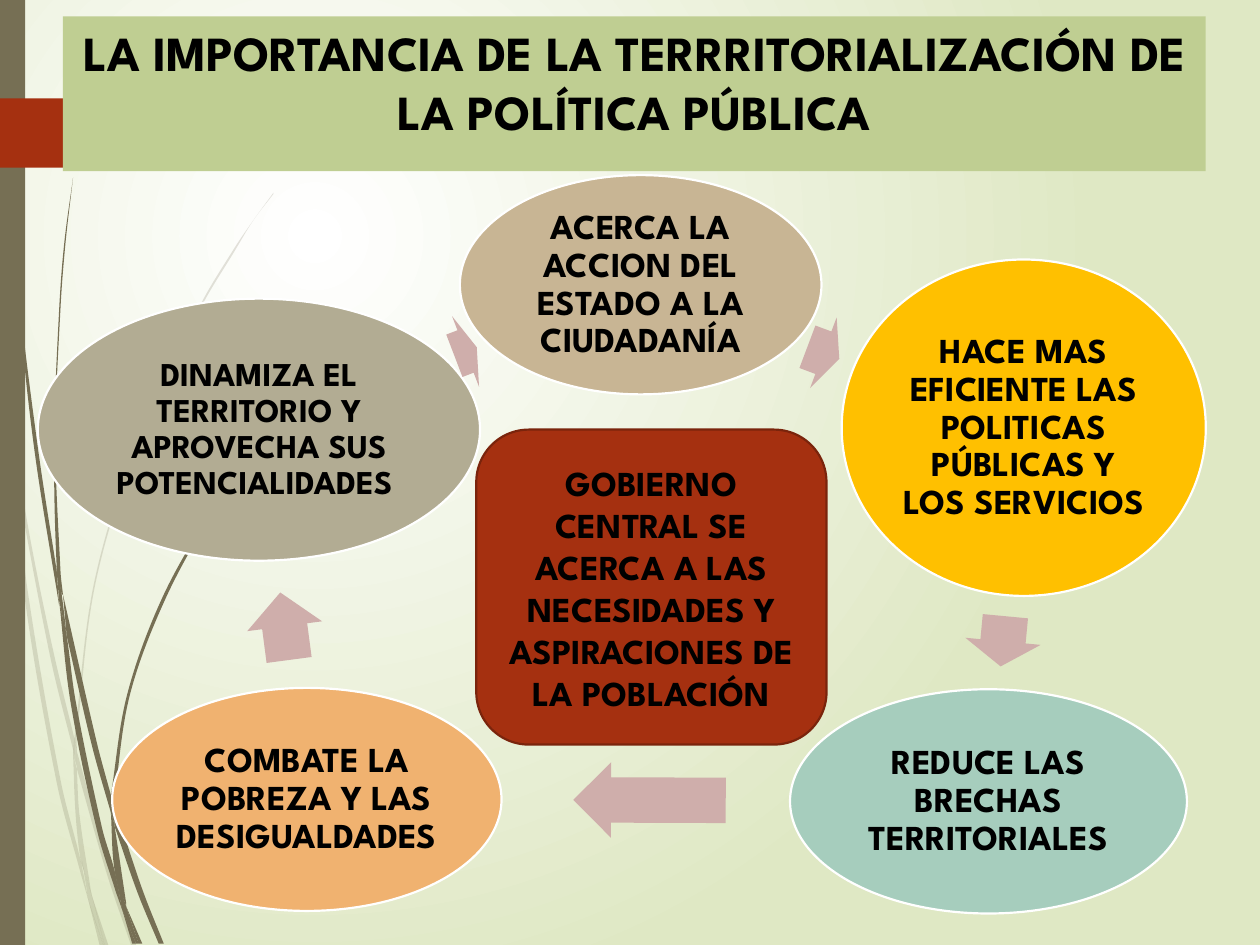
import math

from lxml import etree
from pptx import Presentation
from pptx import util as u
from pptx.dml.color import RGBColor
from pptx.enum import shapes, text
from pptx.oxml import ns

PX = u.Inches(1) // 100  # the slide is 1000 x 750 px
FONT = "League Spartan"
SHAPE = shapes.MSO_SHAPE

BLACK = RGBColor(0x00, 0x00, 0x00)
WHITE = RGBColor(0xFF, 0xFF, 0xFF)
PALE_GREEN = RGBColor(0xDF, 0xE8, 0xC4)
TITLE_GREEN = RGBColor(0xBF, 0xCE, 0x92)
OLIVE = RGBColor(0x76, 0x6F, 0x54)
RUST = RGBColor(0xA5, 0x30, 0x10)
DARK_RUST = RGBColor(0x7A, 0x24, 0x0C)
ROSE = RGBColor(0xCF, 0xAE, 0xAB)
TAN = RGBColor(0xC8, 0xB5, 0x94)
AMBER = RGBColor(0xFF, 0xC0, 0x00)
TEAL = RGBColor(0xA6, 0xCD, 0xBD)
ORANGE = RGBColor(0xF0, 0xB2, 0x70)
STONE = RGBColor(0xB2, 0xAC, 0x93)

# Each blade of grass: the points of its one edge and of the way back.
FAINT_BLADES = [
    ([(8, 350), (6, 322), (0, 282)], [(0, 299), (7, 344)]),
    ([(10, 345), (25, 433), (43, 520), (59, 586)], [(59, 599), (40, 522), (12, 376)]),
    ([(61, 596), (64, 607), (88, 692), (108, 750)], [(104, 750), (85, 694), (61, 610)]),
    ([(73, 711), (83, 750)], [(86, 750)]),
    ([(8, 350), (12, 376), (22, 469), (48, 619), (64, 683), (70, 714)],
     [(64, 693), (45, 621), (19, 470), (8, 350)]),
    ([(58, 599), (60, 646), (64, 683), (67, 692), (73, 711)],
     [(72, 706), (63, 646), (61, 610)]),
    ([(59, 586), (75, 461), (110, 348), (158, 244), (186, 197), (201, 175), (217, 153)],
     [(217, 154), (201, 175), (187, 198), (159, 245), (111, 349), (76, 462), (61, 584),
      (61, 596)]),
    ([(70, 714), (79, 750)], [(82, 750)]),
    ([(61, 608), (61, 596), (59, 586)], [(58, 599)]),
    ([(65, 683), (67, 692), (73, 711), (83, 750)], [(82, 750), (70, 714), (69, 707)]),
]
DARK_BLADES = [
    ([(2, 0), (3, 48), (5, 110), (14, 233), (27, 355), (47, 481)],
     [(45, 453), (30, 355), (15, 232), (6, 109), (4, 48), (3, 0)]),
    ([(50, 472), (77, 590), (88, 631)], [(88, 645), (73, 592), (53, 505)]),
    ([(91, 641), (94, 649), (113, 706), (130, 749)], [(126, 749), (109, 708), (91, 656)]),
    ([(47, 477), (53, 505), (60, 556), (81, 657), (91, 691), (97, 722)],
     [(92, 708), (77, 659), (56, 557), (47, 477)]),
    ([(58, 141), (51, 193), (47, 245), (43, 349), (45, 449), (49, 472)],
     [(50, 472), (48, 453), (44, 349), (48, 245), (52, 193), (58, 141)]),
    ([(100, 719), (110, 749)], [(113, 749)]),
    ([(45, 449), (49, 472), (53, 505)], [(47, 477), (45, 453)]),
    ([(88, 631), (101, 551), (129, 474), (168, 405), (191, 373), (203, 358), (215, 344)],
     [(216, 344), (203, 359), (191, 374), (169, 406), (131, 476), (103, 552), (91, 633),
      (91, 641)]),
    ([(97, 722), (105, 749)], [(108, 749)]),
    ([(88, 645), (91, 691), (100, 719)], [(100, 716), (91, 656), (90, 651)]),
    ([(88, 631), (91, 641), (91, 656)], [(90, 651), (88, 645)]),
    ([(91, 691), (96, 717), (97, 722), (108, 749)], [(110, 749), (100, 719), (96, 706)]),
]

# Wording, box, colour and text size of each stage, then box and turn of its arrow.
STAGES = [
    ("ACERCA LA ACCION DEL ESTADO A LA CIUDADANÍA",
     (365, 139, 287, 174), TAN, 20, (640, 250, 27, 60), 20.6),
    ("HACE MAS EFICIENTE LAS POLITICAS PÚBLICAS Y LOS SERVICIOS",
     (668, 206, 289, 267), AMBER, 20, (776, 479, 40, 60), 95.4),
    ("REDUCE LAS BRECHAS TERRITORIALES",
     (627, 547, 315, 178), TEAL, 20, (455, 605, 121, 60), 180.2),
    ("COMBATE LA POBREZA Y LAS DESIGUALDADES",
     (89, 546, 309, 177), ORANGE, 20, (199, 467, 54, 60), 262.5),
    ("DINAMIZA EL TERRITORIO Y APROVECHA SUS POTENCIALIDADES ",
     (30, 237, 351, 208), STONE, 19, (360, 249, 19, 60), 339.1),
]


def paint(shape, fill, line=None):
    shape.shadow.inherit = False
    shape.fill.solid()
    shape.fill.fore_color.rgb = fill
    if line is None:
        shape.line.fill.background()
    else:
        shape.line.color.rgb = line
        shape.line.width = u.Pt(1.25)


def add_block(slide, kind, box, fill, line=None):
    block = slide.shapes.add_shape(kind, *(side * PX for side in box))
    paint(block, fill, line)
    return block


def write(shape, wording, size, anchor=text.MSO_ANCHOR.MIDDLE, spacing=None, inset=None):
    frame = shape.text_frame
    frame.word_wrap = True
    frame.vertical_anchor = anchor
    if inset is not None:
        frame.margin_left = frame.margin_right = inset * PX
        frame.margin_top = frame.margin_bottom = inset * PX
    frame.text = wording
    paragraph = frame.paragraphs[0]
    paragraph.alignment = text.PP_ALIGN.CENTER
    paragraph.line_spacing = spacing
    font = paragraph.runs[0].font
    font.name, font.size, font.bold = FONT, u.Pt(size), True
    font.color.rgb = BLACK


def add_outline(slide, points, fill):
    corners = [(x * PX, y * PX) for x, y in points]
    builder = slide.shapes.build_freeform(*corners[0])
    builder.add_line_segments(corners[1:], close=True)
    outline = builder.convert_to_shape()
    paint(outline, fill)
    return outline


def curve_controls(points):
    """Two Bézier control points for each step along a smooth edge."""
    padded = [points[0], *points, points[-1]]
    for a, b, c, d in zip(padded, padded[1:], padded[2:], padded[3:]):
        reach = math.dist(b, c) / 3
        leave, arrive = reach / math.dist(a, c), reach / math.dist(b, d)
        yield ((b[0] + (c[0] - a[0]) * leave, b[1] + (c[1] - a[1]) * leave),
               (c[0] - (d[0] - b[0]) * arrive, c[1] - (d[1] - b[1]) * arrive))


def add_blade(slide, edge, way_back, opacity=100):
    points = edge + way_back
    blade = add_outline(slide, points, OLIVE)
    left, top = (min(axis) for axis in zip(*points))
    steps = list(blade._element.iter(ns.qn("a:lnTo")))
    controls = [*curve_controls(edge), None, *curve_controls(way_back)]
    for step, pair in zip(steps, controls):
        if pair is None:
            continue
        curve = etree.Element(ns.qn("a:cubicBezTo"))
        for x, y in pair:
            etree.SubElement(curve, ns.qn("a:pt"), x=str(round((x - left) * PX)),
                             y=str(round((y - top) * PX)))
        curve.append(step[0])
        step.getparent().replace(step, curve)
    if opacity < 100:
        colour = blade.fill._xPr.find(".//" + ns.qn("a:srgbClr"))
        etree.SubElement(colour, ns.qn("a:alpha"), val=str(opacity * 1000))


def set_background(slide):
    """Radial glow, white in the upper left and pale green around it."""
    fill = slide.background.fill
    fill.gradient()
    for stop, colour, position in zip(fill.gradient_stops, (WHITE, PALE_GREEN), (0, 1)):
        stop.color.rgb = colour
        stop.position = position
    linear = slide.background._cSld.find(".//" + ns.qn("a:lin"))
    glow = etree.Element(ns.qn("a:path"), path="circle")
    etree.SubElement(glow, ns.qn("a:fillToRect"), l="50000", t="50000", r="100000", b="100000")
    linear.getparent().replace(linear, glow)


def add_stage(slide, wording, box, fill, size, arrow_box, turn):
    stage = add_block(slide, SHAPE.OVAL, box, fill, WHITE)
    write(stage, wording, size, spacing=0.9, inset=3)
    arrow = add_block(slide, SHAPE.RIGHT_ARROW, arrow_box, ROSE)
    arrow.adjustments[0] = 0.6
    arrow.rotation = turn


def main():
    deck = Presentation()
    deck.slide_width, deck.slide_height = 1000 * PX, 750 * PX
    slide = deck.slides.add_slide(deck.slide_layouts[6])
    set_background(slide)
    for blades, opacity in ((FAINT_BLADES, 20), (DARK_BLADES, 100)):
        for edge, way_back in blades:
            add_blade(slide, edge, way_back, opacity)
    add_block(slide, SHAPE.RECTANGLE, (0, 0, 20, 750), OLIVE)
    add_outline(slide, [(0, 78), (121, 78), (124, 79), (149, 104), (149, 107),
                        (124, 132), (121, 133), (0, 133)], RUST)
    title = add_block(slide, SHAPE.RECTANGLE, (50, 13, 907, 123), TITLE_GREEN)
    write(title, "LA IMPORTANCIA DE LA TERRRITORIALIZACIÓN DE LA POLÍTICA PÚBLICA", 28,
          anchor=text.MSO_ANCHOR.TOP)
    for stage in STAGES:
        add_stage(slide, *stage)
    centre = add_block(slide, SHAPE.ROUNDED_RECTANGLE, (378, 341, 278, 250), RUST, DARK_RUST)
    write(centre, "GOBIERNO CENTRAL SE ACERCA A LAS NECESIDADES Y ASPIRACIONES "
                  "DE LA POBLACIÓN", 20)
    deck.save("out.pptx")


if __name__ == "__main__":
    main()
